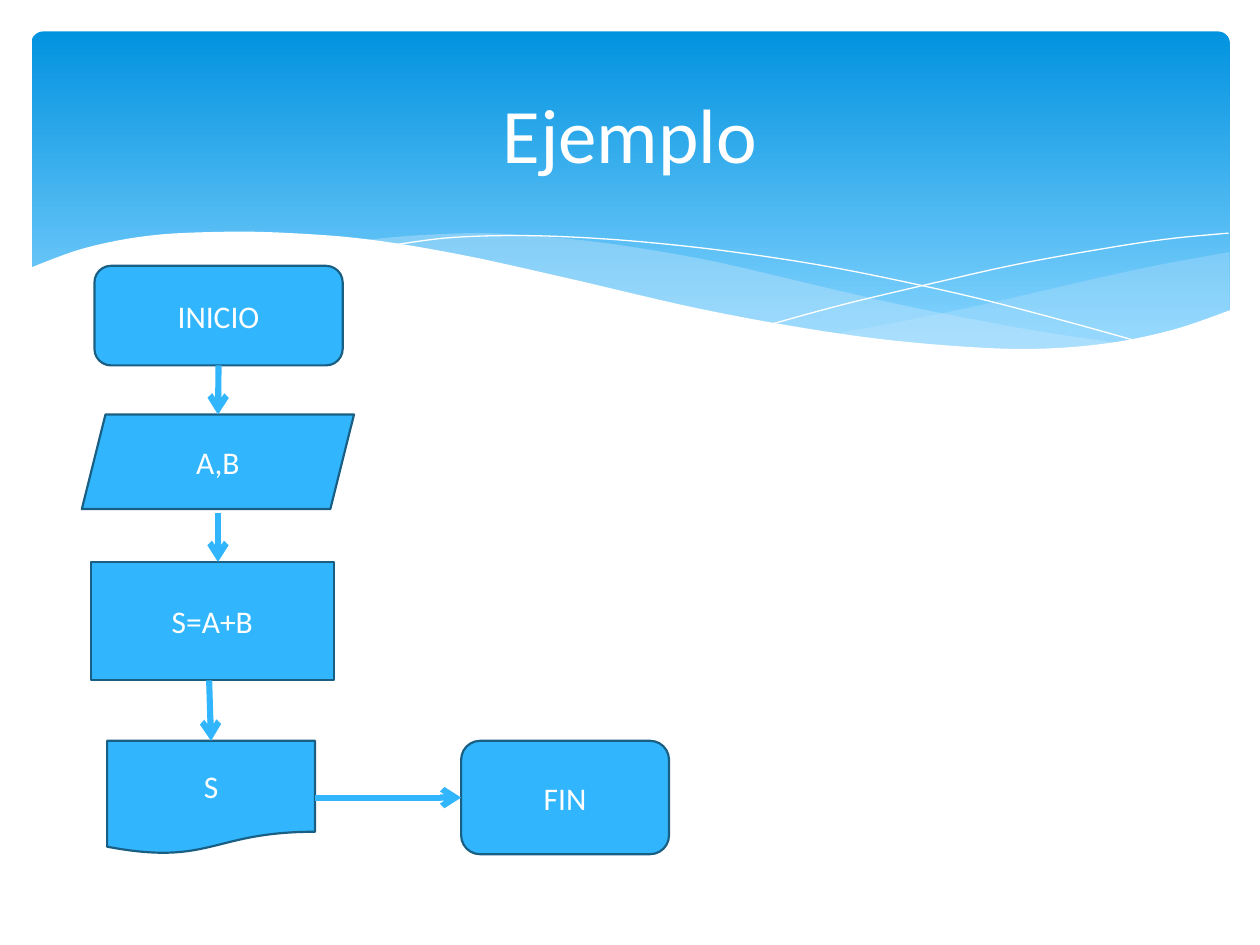
from dataclasses import dataclass
from typing import Optional

from lxml.etree import SubElement
from pptx import Presentation
from pptx.dml.color import RGBColor
from pptx.enum.shapes import MSO_CONNECTOR, MSO_SHAPE
from pptx.enum.text import MSO_ANCHOR, PP_ALIGN
from pptx.oxml.ns import qn
from pptx.util import Inches, Pt

WHITE = RGBColor(0xFF, 0xFF, 0xFF)
BANNER_TOP = RGBColor(0x02, 0x93, 0xE0)
BANNER_BOTTOM = RGBColor(0x83, 0xD3, 0xFE)
PALE_BLUE = RGBColor(0xC6, 0xE7, 0xFC)
NODE_BLUE = RGBColor(0x31, 0xB6, 0xFD)
NODE_EDGE = RGBColor(0x19, 0x5F, 0x84)
FONT = "Calibri"
TOP, LEFT, BOTTOM, RIGHT = range(4)
Point = tuple[float, float]


@dataclass
class Wave:
    """Smooth edges, joined by corners; alpha in percent, None for a bare line."""
    edges: list[list[Point]]
    color: RGBColor = PALE_BLUE
    alpha: Optional[int] = None


@dataclass
class Node:
    text: str
    kind: MSO_SHAPE
    left: float
    top: float
    width: float
    height: float


@dataclass
class Arrow:
    """A straight arrow; a joined end names a node and its side."""
    start: Point
    end: Point
    source: Optional[tuple[str, int]] = None
    target: Optional[tuple[str, int]] = None


WAVES = [
    Wave([[(9.76, 2), (9.21, 2.1), (8.61, 2.23), (7.79, 2.42), (7.06, 2.57), (6.61, 2.65)],
          [(6.61, 2.65), (7.05, 2.71), (7.57, 2.76), (8.03, 2.78), (8.44, 2.77),
           (8.89, 2.72), (9.35, 2.62), (9.76, 2.47)]], alpha=29),
    Wave([[(8.93, 2.73), (8.37, 2.65), (7.75, 2.54), (7.06, 2.4), (6.29, 2.22), (5.69, 2.08),
           (5.14, 1.98), (4.65, 1.91), (4.2, 1.87), (3.8, 1.85), (3.28, 1.87), (2.86, 1.91)],
          [(2.86, 1.91), (3.42, 1.99), (4.04, 2.11), (4.49, 2.22), (5.3, 2.4), (6.01, 2.55),
           (6.65, 2.66), (7.22, 2.74), (7.73, 2.77), (8.18, 2.78), (8.57, 2.77), (8.93, 2.73)]],
         alpha=40),
    Wave([[(3.09, 1.95), (3.53, 1.89), (4.01, 1.87), (4.5, 1.88), (5.1, 1.92), (5.82, 2),
           (6.65, 2.13), (7.6, 2.33), (8.31, 2.51), (9.07, 2.72)]], WHITE),
    Wave([[(6.13, 2.57), (6.72, 2.41), (7.48, 2.23), (8.06, 2.1), (8.66, 1.99),
           (9.24, 1.9), (9.75, 1.85)]], WHITE),
    Wave([[(9.77, 2.46), (9.3, 2.62), (8.75, 2.73), (8.09, 2.77), (7.26, 2.72), (6.48, 2.62),
           (5.55, 2.45), (4.47, 2.2), (3.65, 2.02), (2.92, 1.9), (2.3, 1.85), (1.77, 1.84),
           (1.19, 1.87), (0.67, 1.97), (0.23, 2.13)],
          [(0.23, 3.29), (9.77, 3.29)]], WHITE, alpha=100),
]

NODES = [
    Node("INICIO", MSO_SHAPE.FLOWCHART_ALTERNATE_PROCESS, 0.75, 2.11, 1.97, 0.79),
    Node("S=A+B", MSO_SHAPE.RECTANGLE, 0.72, 4.46, 1.93, 0.94),
    Node("A,B", MSO_SHAPE.PARALLELOGRAM, 0.65, 3.29, 2.16, 0.75),
    Node("S", MSO_SHAPE.FLOWCHART_DOCUMENT, 0.85, 5.88, 1.65, 0.9),
    Node("FIN", MSO_SHAPE.ROUNDED_RECTANGLE, 3.66, 5.88, 1.65, 0.9),
]

ARROWS = [
    Arrow((1.73, 2.9), (1.73, 3.29), ("INICIO", BOTTOM), ("A,B", TOP)),
    Arrow((1.73, 4.07), (1.73, 4.46)),
    Arrow((1.66, 5.4), (1.68, 5.88), target=("S", TOP)),
    Arrow((2.5, 6.33), (3.66, 6.33), ("S", RIGHT), ("FIN", LEFT)),
]


def smooth(points: list[Point], steps: int = 6) -> list[Point]:
    """Sample a Catmull-Rom curve that passes through the points."""
    padded = [points[0], *points, points[-1]]
    curve = [points[0]]
    for a, b, c, d in zip(padded, padded[1:], padded[2:], padded[3:]):
        for step in range(1, steps + 1):
            t = step / steps
            curve.append(tuple(
                b[i] + t * (c[i] - a[i]) / 2
                + t**2 * (2 * a[i] - 5 * b[i] + 4 * c[i] - d[i]) / 2
                + t**3 * (3 * b[i] - a[i] - 3 * c[i] + d[i]) / 2
                for i in (0, 1)))
    return curve


def write_text(box, text: str, size: int) -> None:
    frame = box.text_frame
    frame.word_wrap = True
    frame.vertical_anchor = MSO_ANCHOR.MIDDLE
    para = frame.paragraphs[0]
    para.alignment = PP_ALIGN.CENTER
    span = para.add_run()
    span.text = text
    span.font.name = FONT
    span.font.size = Pt(size)
    span.font.color.rgb = WHITE


def draw_banner(page) -> None:
    banner = page.shapes.add_shape(
        MSO_SHAPE.ROUNDED_RECTANGLE, Inches(0.25), Inches(0.25), Inches(9.51), Inches(2.7))
    banner.adjustments[0] = 0.034
    banner.shadow.inherit = False
    banner.line.fill.background()
    banner.fill.gradient()
    banner.fill.gradient_angle = 270
    stops = banner.fill.gradient_stops
    for stop, position, color in zip(stops, (0, 0.9), (BANNER_TOP, BANNER_BOTTOM)):
        stop.position = position
        stop.color.rgb = color


def draw_wave(page, wave: Wave) -> None:
    points = [(Inches(x), Inches(y)) for edge in wave.edges for x, y in smooth(edge)]
    filled = wave.alpha is not None
    builder = page.shapes.build_freeform(*points[0])
    builder.add_line_segments(points[1:], close=filled)
    shape = builder.convert_to_shape()
    shape.shadow.inherit = False
    if filled:
        shape.line.fill.background()
        shape.fill.solid()
        shape.fill.fore_color.rgb = wave.color
        color = shape.fill._xPr.find(qn("a:solidFill")).find(qn("a:srgbClr"))
        SubElement(color, qn("a:alpha"), val=str(wave.alpha * 1000))
    else:
        shape.fill.background()
        shape.line.color.rgb = wave.color
        shape.line.width = Pt(0)


def draw_node(page, node: Node):
    shape = page.shapes.add_shape(
        node.kind, Inches(node.left), Inches(node.top), Inches(node.width), Inches(node.height))
    shape.shadow.inherit = False
    shape.fill.solid()
    shape.fill.fore_color.rgb = NODE_BLUE
    shape.line.color.rgb = NODE_EDGE
    shape.line.width = Pt(1.25)
    write_text(shape, node.text, 18)
    return shape


def draw_arrow(page, arrow: Arrow, shapes: dict) -> None:
    ends = [Inches(value) for value in (*arrow.start, *arrow.end)]
    line = page.shapes.add_connector(MSO_CONNECTOR.STRAIGHT, *ends)
    if arrow.source:
        name, side = arrow.source
        line.begin_connect(shapes[name], side)
    if arrow.target:
        name, side = arrow.target
        line.end_connect(shapes[name], side)
    line.line.color.rgb = NODE_BLUE
    line.line.width = Pt(3.5)
    SubElement(line.line._get_or_add_ln(), qn("a:tailEnd"), type="arrow")
    SubElement(line._element.spPr, qn("a:effectLst"))


def main() -> None:
    deck = Presentation()
    deck.slide_width, deck.slide_height = Inches(10), Inches(7.5)
    page = deck.slides.add_slide(deck.slide_layouts[6])
    draw_banner(page)
    for wave in WAVES:
        draw_wave(page, wave)
    title = page.shapes.add_textbox(Inches(0.5), Inches(0.37), Inches(9), Inches(1.37))
    write_text(title, "Ejemplo", 44)
    shapes = {node.text: draw_node(page, node) for node in NODES}
    for arrow in ARROWS:
        draw_arrow(page, arrow, shapes)
    deck.save("out.pptx")


if __name__ == "__main__":
    main()
